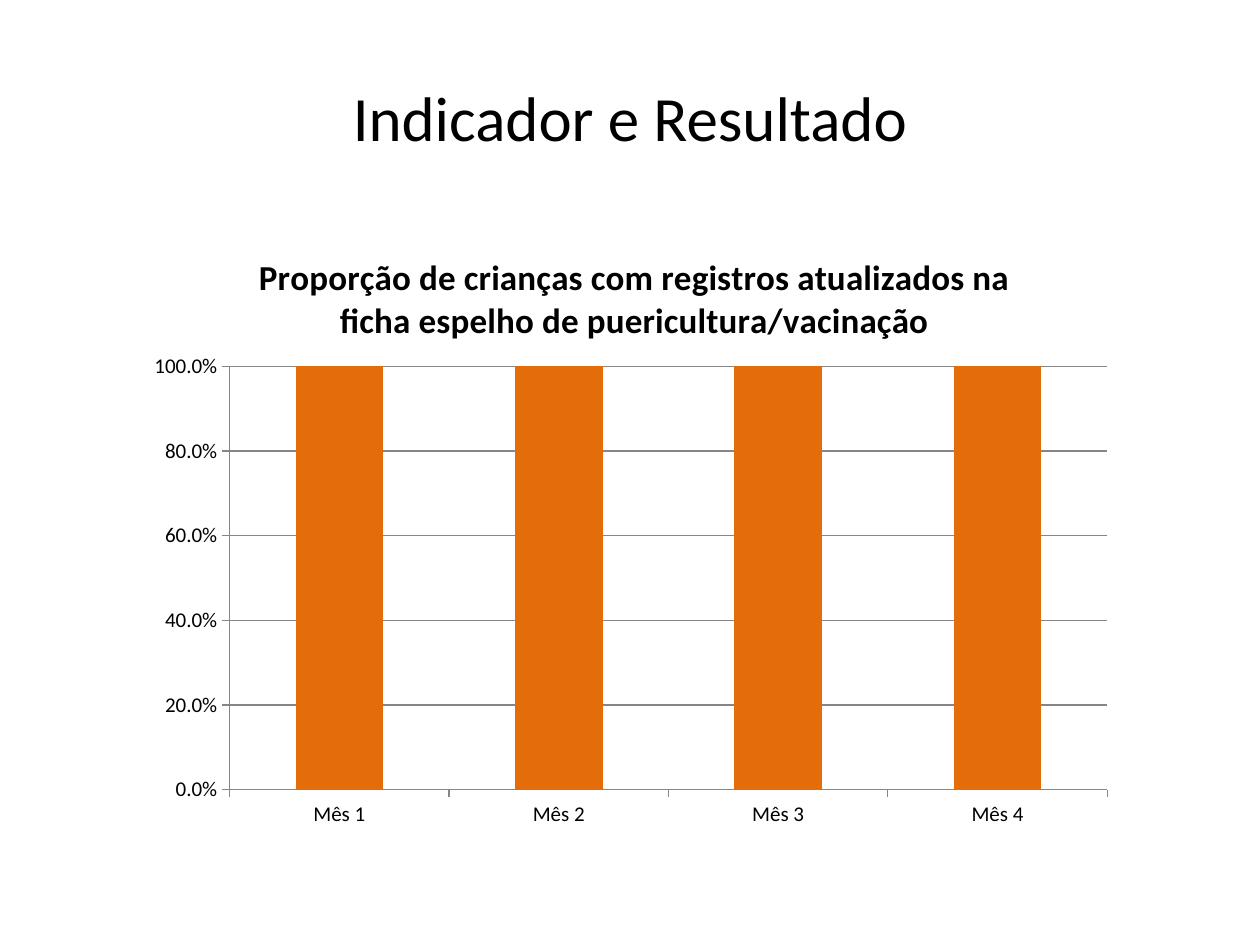
from dataclasses import dataclass

from lxml.etree import SubElement
from pptx import Presentation
from pptx.chart.axis import _BaseAxis
from pptx.chart.chart import Chart
from pptx.chart.data import CategoryChartData
from pptx.dml.color import RGBColor
from pptx.enum.chart import XL_CHART_TYPE, XL_TICK_MARK
from pptx.enum.text import MSO_ANCHOR, PP_ALIGN
from pptx.oxml.ns import qn
from pptx.slide import Slide
from pptx.util import Emu, Inches, Pt


@dataclass(frozen=True)
class Theme:
    font: str = "Calibri"
    ink: RGBColor = RGBColor(0, 0, 0)
    bar: RGBColor = RGBColor(0xE4, 0x6C, 0x0A)
    rule: RGBColor = RGBColor(0x86, 0x86, 0x86)
    heading_size: Pt = Pt(36)
    chart_title_size: Pt = Pt(20)
    axis_size: Pt = Pt(12)
    base_size: Pt = Pt(10)
    rule_width: Pt = Pt(0.75)


@dataclass(frozen=True)
class Area:
    """A rectangle given as shares of its container."""
    x: float
    y: float
    w: float
    h: float

    def on_slide(self) -> tuple[Emu, Emu, Emu, Emu]:
        return (Emu(int(self.x * SLIDE_W)), Emu(int(self.y * SLIDE_H)),
                Emu(int(self.w * SLIDE_W)), Emu(int(self.h * SLIDE_H)))


THEME = Theme()
SLIDE_W, SLIDE_H = Inches(10), Inches(7.5)
HEADING_AREA = Area(0.05, 0.04, 0.9, 1 / 6)
CHART_AREA = Area(0.106, 0.227, 0.787, 0.661)
PLOT_AREA = Area(0.097, 0.243, 0.885, 0.678)
CHART_TITLE_AREA = Area(0.12, 0.05, 0, 0)

HEADING = "Indicador e Resultado"
INDICATOR = ("Proporção de crianças com registros atualizados na "
             "ficha espelho de puericultura/vacinação")
MONTHS = [f"Mês {number}" for number in range(1, 5)]
SHARES = [1, 1, 1, 1]


def add_heading(slide: Slide) -> None:
    frame = slide.shapes.add_textbox(*HEADING_AREA.on_slide()).text_frame
    frame.word_wrap = True
    frame.vertical_anchor = MSO_ANCHOR.MIDDLE
    paragraph = frame.paragraphs[0]
    paragraph.alignment = PP_ALIGN.CENTER
    run = paragraph.add_run()
    run.text = HEADING
    run.font.name = THEME.font
    run.font.size = THEME.heading_size
    run.font.color.rgb = THEME.ink


def style_line(line) -> None:
    line.color.rgb = THEME.rule
    line.width = THEME.rule_width


def style_axis(axis: _BaseAxis) -> None:
    axis.major_tick_mark = XL_TICK_MARK.OUTSIDE
    axis.minor_tick_mark = XL_TICK_MARK.NONE
    axis.tick_labels.font.size = THEME.axis_size
    style_line(axis.format.line)


def fill_layout(layout, values: dict[str, str | float]) -> None:
    manual = SubElement(layout, qn("c:manualLayout"))
    for tag, value in values.items():
        SubElement(manual, qn(f"c:{tag}")).set("val", str(value))


def place_plot(chart: Chart, area: Area) -> None:
    plot_area = chart.element.find(".//" + qn("c:plotArea"))
    layout = plot_area.find(qn("c:layout"))
    if layout is None:
        layout = SubElement(plot_area, qn("c:layout"))
        plot_area.insert(0, layout)
    fill_layout(layout, {"layoutTarget": "inner", "xMode": "edge", "yMode": "edge",
                         "x": area.x, "y": area.y, "w": area.w, "h": area.h})


def add_chart_title(chart: Chart) -> None:
    chart.has_title = True
    run = chart.chart_title.text_frame.paragraphs[0].add_run()
    run.text = INDICATOR
    run.font.name = THEME.font
    run.font.size = THEME.chart_title_size
    run.font.bold = True
    run.font.color.rgb = THEME.ink
    title = chart.element.find(".//" + qn("c:title"))
    layout = title.find(qn("c:layout"))
    if layout is None:
        layout = SubElement(title, qn("c:layout"))
        title.find(qn("c:tx")).addnext(layout)
    fill_layout(layout, {"xMode": "edge", "yMode": "edge",
                         "x": CHART_TITLE_AREA.x, "y": CHART_TITLE_AREA.y})


def add_indicator_chart(slide: Slide) -> None:
    data = CategoryChartData(number_format="0.0%")
    data.categories = MONTHS
    data.add_series(INDICATOR, SHARES)
    chart = slide.shapes.add_chart(
        XL_CHART_TYPE.COLUMN_CLUSTERED, *CHART_AREA.on_slide(), data).chart
    chart.has_legend = False
    chart.font.name = THEME.font
    chart.font.size = THEME.base_size
    chart.font.color.rgb = THEME.ink
    add_chart_title(chart)
    place_plot(chart, PLOT_AREA)

    bars = chart.plots[0]
    bars.vary_by_categories = False
    bars.gap_width = 150
    fill = bars.series[0].format.fill
    fill.solid()
    fill.fore_color.rgb = THEME.bar

    style_axis(chart.category_axis)
    shares = chart.value_axis
    style_axis(shares)
    shares.minimum_scale, shares.maximum_scale, shares.major_unit = 0, 1, 0.2
    shares.tick_labels.number_format = "0.0%"
    shares.tick_labels.number_format_is_linked = False
    shares.has_major_gridlines = True
    style_line(shares.major_gridlines.format.line)


def main() -> None:
    deck = Presentation()
    deck.slide_width, deck.slide_height = SLIDE_W, SLIDE_H
    slide = deck.slides.add_slide(deck.slide_layouts[6])
    add_heading(slide)
    add_indicator_chart(slide)
    deck.save("out.pptx")


if __name__ == "__main__":
    main()
